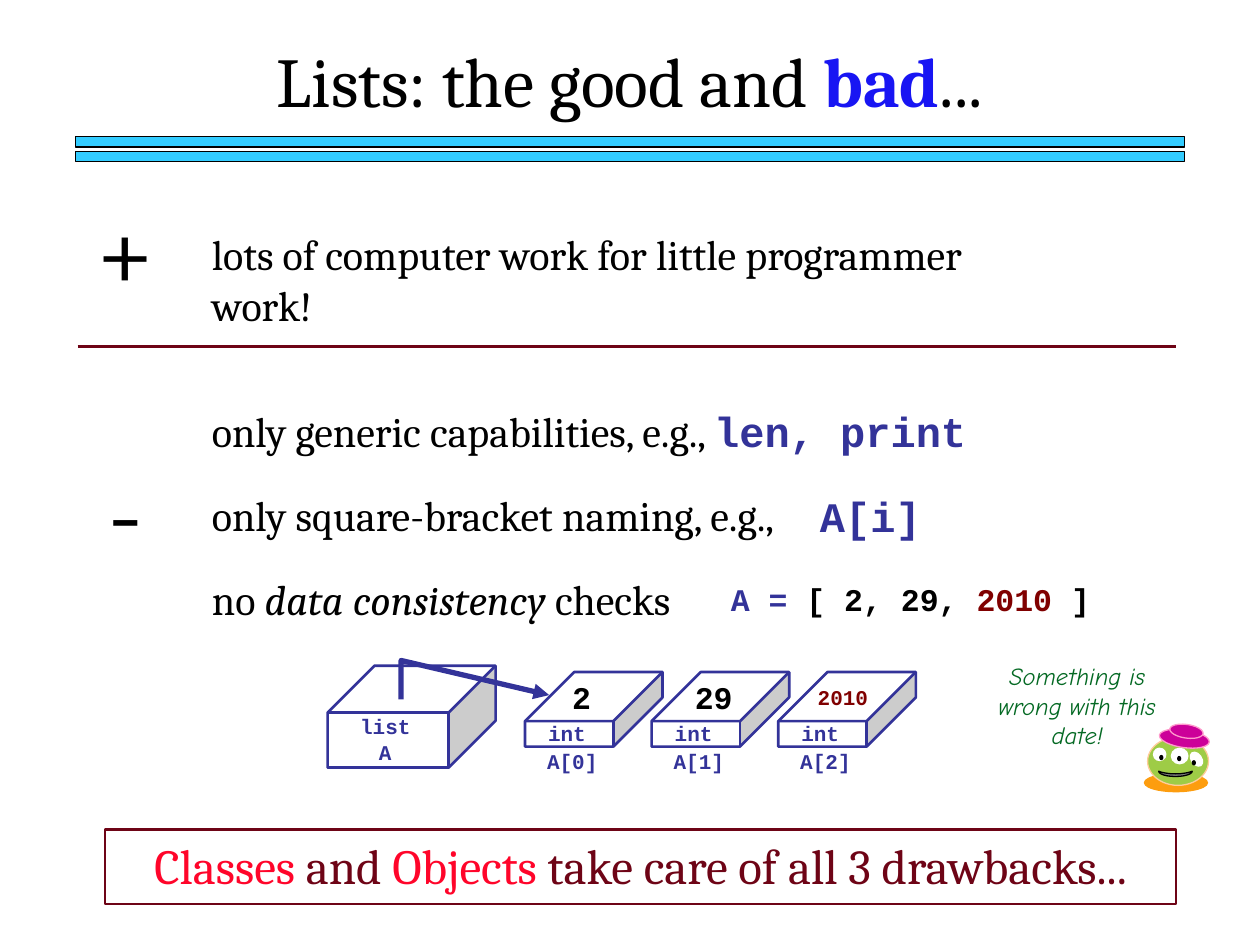
from lxml.etree import SubElement
from pptx import Presentation
from pptx.dml.color import RGBColor
from pptx.enum.shapes import MSO_CONNECTOR, MSO_SHAPE as Shape
from pptx.enum.text import MSO_ANCHOR, PP_ALIGN
from pptx.oxml.ns import qn
from pptx.util import Inches, Pt

# Theme: colours, and text styles as (font, size, colour, bold, italic)
COLOR = dict(ink="000000", bar="33CCFF", navy="333399", wine="6E0416", paper="FFFFFF",
             skin="9ECC46", skin_edge="FFCC99", feet="FD9D0F", hat="CC0099",
             hat_edge="FF99CC", smile="808080")
STYLE = dict(
    title=("Cambria", 40, "000000", False, False),
    title_bad=("Cambria", 40, "1815F3", True, False),
    sign=("Cambria", 60, "000000", False, False),
    body=("Cambria", 24, "000000", False, False),
    stress=("Cambria", 24, "000000", False, True),
    code=("Courier New", 24, "333399", True, False),
    assign=("Courier New", 18, "333399", True, False),
    value=("Courier New", 18, "000000", True, False),
    wrong=("Courier New", 18, "800000", True, False),
    wrong_small=("Courier New", 12, "800000", True, False),
    label=("Courier New", 12, "333399", True, False),
    remark=("Comic Neue", 14, "046923", False, True),
    banner=("Cambria", 28, "6E0416", False, False),
    banner_key=("Cambria", 28, "FF052A", False, False),
)

# The slide is a grid of 120 columns by 90 rows; boxes are left, top, width, height
COLUMNS, ROWS = 120, 90
SLIDE_WIDTH, SLIDE_HEIGHT = Inches(10), Inches(7.5)
CELL = SLIDE_WIDTH / COLUMNS

# Content: runs are (text, style)
TITLE = [("Lists: the good and ", "title"), ("bad", "title_bad"), ("...", "title")]
SIGNS = [("+", 17), ("-", 41.8)]
POINTS = [
    (21.2, 84, [("lots of computer work for little programmer work!", "body")]),
    (38, 81, [("only generic capabilities, e.g., ", "body"), ("len, print", "code")]),
    (46, 87, [("only square-bracket naming, e.g.,", "body")]),
    (54, 77, [("no ", "body"), ("data consistency ", "stress"), ("checks", "body")]),
]
INDEXING = [("A[i]", "code")]
ASSIGNMENT = [("A = ", "assign"), ("[ 2, 29, ", "value"), ("2010 ", "wrong"), ("]", "value")]
LIST_LABELS = [("list", 67.4), ("A", 69.8)]
ELEMENTS = [("2", "value", 64), ("29", "value", 64), ("2010", "wrong_small", 64.6)]
REMARK = [("Something is wrong with this date!", "remark")]
BANNER = [("Classes", "banner_key"), (" and ", "banner"), ("Objects", "banner_key"),
          (" take care of all 3 drawbacks...", "banner")]

# Little monster: preset, box, fill, line, rotation
MONSTER = [
    (Shape.OVAL, (109, 73.7, 6, 1.7), "feet", "feet", 0),
    (Shape.OVAL, (109.3, 70.2, 5.8, 4.6), "skin", "skin_edge", 0),
    (Shape.OVAL, (109.8, 71.2, 1.3, 1.3), "paper", None, 327),
    (Shape.OVAL, (111.5, 71.2, 1.7, 1.6), "paper", None, 0),
    (Shape.OVAL, (113.4, 71.5, 1.1, 1.6), "paper", None, 325),
    (Shape.OVAL, (110.4, 71.9, 0.4, 0.5), "ink", None, 0),
    (Shape.OVAL, (112.1, 72, 0.4, 0.5), "ink", None, 0),
    (Shape.OVAL, (113.5, 72.4, 0.4, 0.5), "ink", None, 0),
    (Shape.MOON, (111.7, 72.1, 0.5, 3.2), "smile", "ink", 270),
    (Shape.OVAL, (110.4, 69.5, 4.8, 1.7), "hat", "hat_edge", 8),
    (Shape.OVAL, (111.4, 69, 3.2, 1.3), "hat", "hat_edge", 8),
]

deck = Presentation()
deck.slide_width, deck.slide_height = SLIDE_WIDTH, SLIDE_HEIGHT
shapes = deck.slides.add_slide(deck.slide_layouts[6]).shapes


def grid(*cells):
    return [round(cell * CELL) for cell in cells]


def rgb(name):
    return RGBColor.from_string(COLOR[name])


def write(holder, runs, align, wrap=True):
    frame = holder.text_frame
    frame.word_wrap = wrap
    frame.vertical_anchor = MSO_ANCHOR.TOP
    paragraph = frame.paragraphs[0]
    paragraph.alignment = align
    for words, style in runs:
        run = paragraph.add_run()
        run.text = words
        font = run.font
        font.name, size, color, font.bold, font.italic = STYLE[style]
        font.size = Pt(size)
        font.color.rgb = RGBColor.from_string(color)


def text(box, runs, align=PP_ALIGN.LEFT, wrap=True):
    write(shapes.add_textbox(*grid(*box)), runs, align, wrap)


def outline(part, color, width):
    part.line.color.rgb = rgb(color)
    part.line.width = Pt(width)


def figure(preset, box, fill=None, line=None, width=0.75):
    part = shapes.add_shape(preset, *grid(*box))
    part.shadow.inherit = False
    if fill:
        part.fill.solid()
        part.fill.fore_color.rgb = rgb(fill)
    else:
        part.fill.background()
    if line:
        outline(part, line, width)
    else:
        part.line.fill.background()
    return part


def cube(box, depth):
    figure(Shape.CUBE, box, "paper", "navy", 1.5).adjustments[0] = depth


CENTER = PP_ALIGN.CENTER

# Title with double bar
for bar_top in (13, 14.4):
    figure(Shape.RECTANGLE, (7.2, bar_top, 105.6, 1), "bar", "ink")
text((10, 3, 100, 9.2), TITLE, CENTER)

# Pros and cons
for sign, top in SIGNS:
    text((8, top, 8, 13.2), [(sign, "sign")], CENTER)
for top, width, runs in POINTS:
    text((19, top, width, 6), runs)
text((76.9, 46.1, 12, 6), INDEXING, CENTER, False)
text((68.2, 54.7, 37, 4.8), ASSIGNMENT, CENTER, False)

# Divider
divider = shapes.add_connector(MSO_CONNECTOR.STRAIGHT, *grid(7.4, 33, 112, 33))
outline(divider, "wine", 2.25)
SubElement(divider.element.spPr, qn("a:effectLst"))

# List object and its three elements
cube((31.2, 63.4, 16, 9.7), 0.46)
for label, top in LIST_LABELS:
    text((33.1, top, 7.2, 3.6), [(label, "label")], CENTER, False)
for index, (value, style, top) in enumerate(ELEMENTS):
    left = 50 + 12.06 * index
    cube((left, 64, 13.1, 7.1), 0.66)
    text((left + 1, 68, 6, 3.6), [("int", "label")], CENTER, False)
    text((left + 0.9, 70.7, 7.2, 3.6), [(f"A[{index}]", "label")], CENTER, False)
    text((53.3 + 11.7 * index, top, 7.2, 4.8), [(value, style)], wrap=False)

# Reference arrow from the list to its first element
builder = shapes.build_freeform(*grid(38.2, 66.6))
builder.add_line_segments([grid(38.2, 62.9), grid(52.3, 66.2)], close=False)
reference = builder.convert_to_shape()
reference.shadow.inherit = False
reference.fill.background()
outline(reference, "navy", 3)
SubElement(reference.line._get_or_add_ln(), qn("a:tailEnd"), type="triangle")

# Remark and monster
write(figure(Shape.RECTANGLE, (93.5, 62.4, 18.2, 9.7), "paper"), REMARK, CENTER)
for preset, box, fill, line, turn in MONSTER:
    figure(preset, box, fill, line).rotation = turn

# Conclusion
write(figure(Shape.RECTANGLE, (10, 79, 102, 7.1), None, "wine", 1.5), BANNER, CENTER)

deck.save("out.pptx")
